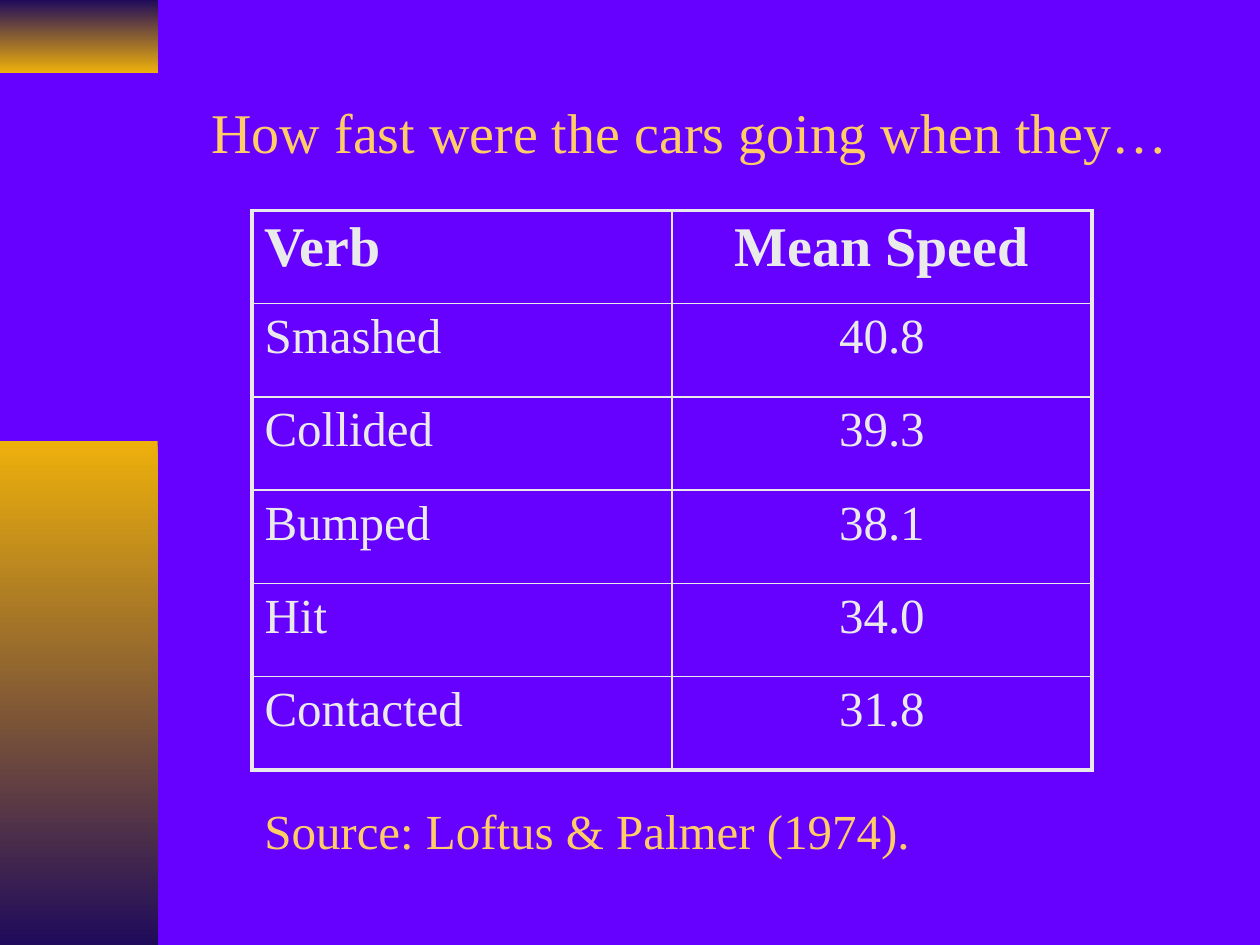
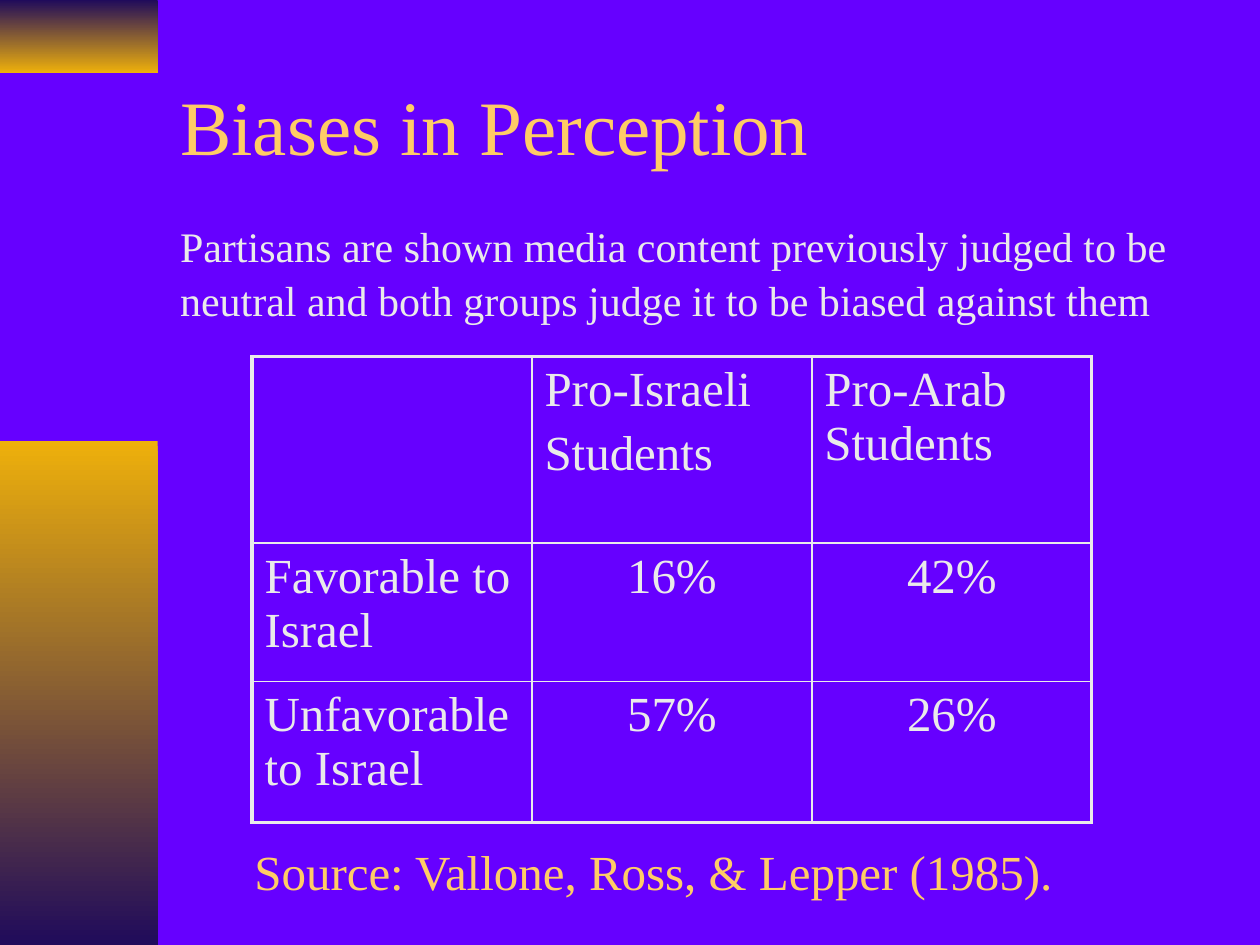
from lxml import etree
from pptx import Presentation
from pptx import util as u
from pptx.dml import color
from pptx.enum import shapes, text
from pptx.oxml import ns

FONT = "Times New Roman"
VIOLET, GOLD, NAVY = "6600FF", "EEB00B", "200B5B"
AMBER, PALE = "FFCC66", "EAEAEA"
LEFT, CENTER = text.PP_ALIGN.LEFT, text.PP_ALIGN.CENTER
THIN, THICK = 1, 2.25


def rgb(value):
    return color.RGBColor.from_string(value)


def write(frame, content, size=28, ink=PALE, bold=False, align=LEFT,
          gap=0, spacing=None):
    frame.word_wrap = True
    for index, line in enumerate(content.split("\n")):
        paragraph = frame.paragraphs[0] if index == 0 else frame.add_paragraph()
        paragraph.alignment = align
        paragraph.line_spacing = spacing
        if index:
            paragraph.space_before = u.Pt(gap)
        run = paragraph.add_run()
        run.text = line
        run.font.name = FONT
        run.font.size = u.Pt(size)
        run.font.bold = bold
        run.font.color.rgb = rgb(ink)


def draw_borders(cell, widths):
    properties = cell._tc.get_or_add_tcPr()
    for position, (side, width) in enumerate(widths.items()):
        border = etree.Element(ns.qn(f"a:ln{side}"), w=str(u.Pt(width)))
        fill = etree.SubElement(border, ns.qn("a:solidFill"))
        etree.SubElement(fill, ns.qn("a:srgbClr"), val=PALE)
        properties.insert(position, border)


class Deck:
    def __init__(self):
        self.show = Presentation()
        self.show.slide_width, self.show.slide_height = u.Cm(25.4), u.Cm(19.05)
        background = self.show.slide_master.background.fill
        background.solid()
        background.fore_color.rgb = rgb(VIOLET)
        self.slide = None

    def start(self, heading, box, size):
        self.slide = self.show.slides.add_slide(self.show.slide_layouts[5])
        self.band(0, 1.47, NAVY, GOLD)
        self.band(8.89, 10.16, GOLD, NAVY)
        title = self.slide.shapes.title
        title.left, title.top, title.width, title.height = map(u.Cm, box)
        title.text_frame.auto_size = text.MSO_AUTO_SIZE.NONE
        title.text_frame.vertical_anchor = text.MSO_ANCHOR.MIDDLE
        write(title.text_frame, heading, size=size, ink=AMBER)

    def band(self, top, height, upper, lower):
        band = self.slide.shapes.add_shape(
            shapes.MSO_SHAPE.RECTANGLE, 0, u.Cm(top), u.Cm(3.18), u.Cm(height))
        band.shadow.inherit = False
        band.line.fill.background()
        band.fill.gradient()
        band.fill.gradient_angle = 270
        for stop, shade in zip(band.fill.gradient_stops, (upper, lower)):
            stop.color.rgb = rgb(shade)

    def note(self, content, box, anchor=text.MSO_ANCHOR.MIDDLE, **style):
        frame = self.slide.shapes.add_textbox(*map(u.Cm, box)).text_frame
        frame.vertical_anchor = anchor
        write(frame, content, **style)

    def source(self, citation, left, top):
        self.note(citation, (left, top, 17.35, 1.7), ink=AMBER)

    def table(self, rows, top, heights, style_for):
        last_row, last_column = len(rows) - 1, len(rows[0]) - 1
        width = 16.93
        table = self.slide.shapes.add_table(
            len(rows), len(rows[0]), u.Cm(5.08), u.Cm(top),
            u.Cm(width), u.Cm(sum(heights))).table
        table.first_row = table.horz_banding = False
        for column in table.columns:
            column.width = u.Cm(width / len(rows[0]))
        for r, (row, height) in enumerate(zip(rows, heights)):
            table.rows[r].height = u.Cm(height)
            for c, content in enumerate(row):
                cell = table.cell(r, c)
                cell.fill.background()
                if content:
                    write(cell.text_frame, content, **style_for(r, c))
                outer = {"L": c == 0, "R": c == last_column,
                         "T": r == 0, "B": r == last_row}
                draw_borders(cell, {side: THICK if edge else THIN
                                    for side, edge in outer.items()})


def speed_style(row, column):
    return {"size": 28 if row else 32, "bold": row == 0,
            "align": CENTER if column else LEFT}


def bias_style(row, column):
    return {"align": CENTER if row and column else LEFT, "gap": 5.6}


def main():
    deck = Deck()

    deck.start("How fast were the cars going when they…",
               (4.01, 1.47, 20.12, 2.34), 32)
    speeds = [("Verb", "Mean Speed"), ("Smashed", "40.8"),
              ("Collided", "39.3"), ("Bumped", "38.1"),
              ("Hit", "34.0"), ("Contacted", "31.8")]
    deck.table(speeds, 4.24, [1.88] * len(speeds), speed_style)
    deck.source("Source: Loftus & Palmer (1974).", 5.08, 15.88)

    deck.start("Biases in Perception", (3.38, 0.84, 21.59, 3.35), 44)
    deck.note("Partisans are shown media content previously judged to be\n"
              "neutral and both groups judge it to be biased against them",
              (3.38, 4.24, 20.8, 2.31), anchor=text.MSO_ANCHOR.TOP,
              size=24, spacing=1.08)
    judgments = [("", "Pro-Israeli\nStudents", "Pro-Arab Students"),
                 ("Favorable to Israel", "16%", "42%"),
                 ("Unfavorable to Israel", "57%", "26%")]
    deck.table(judgments, 7.19, [3.76, 2.79, 2.84], bias_style)
    deck.source("Source: Vallone, Ross, & Lepper (1985).", 4.88, 16.71)

    deck.show.save("out.pptx")


if __name__ == "__main__":
    main()
